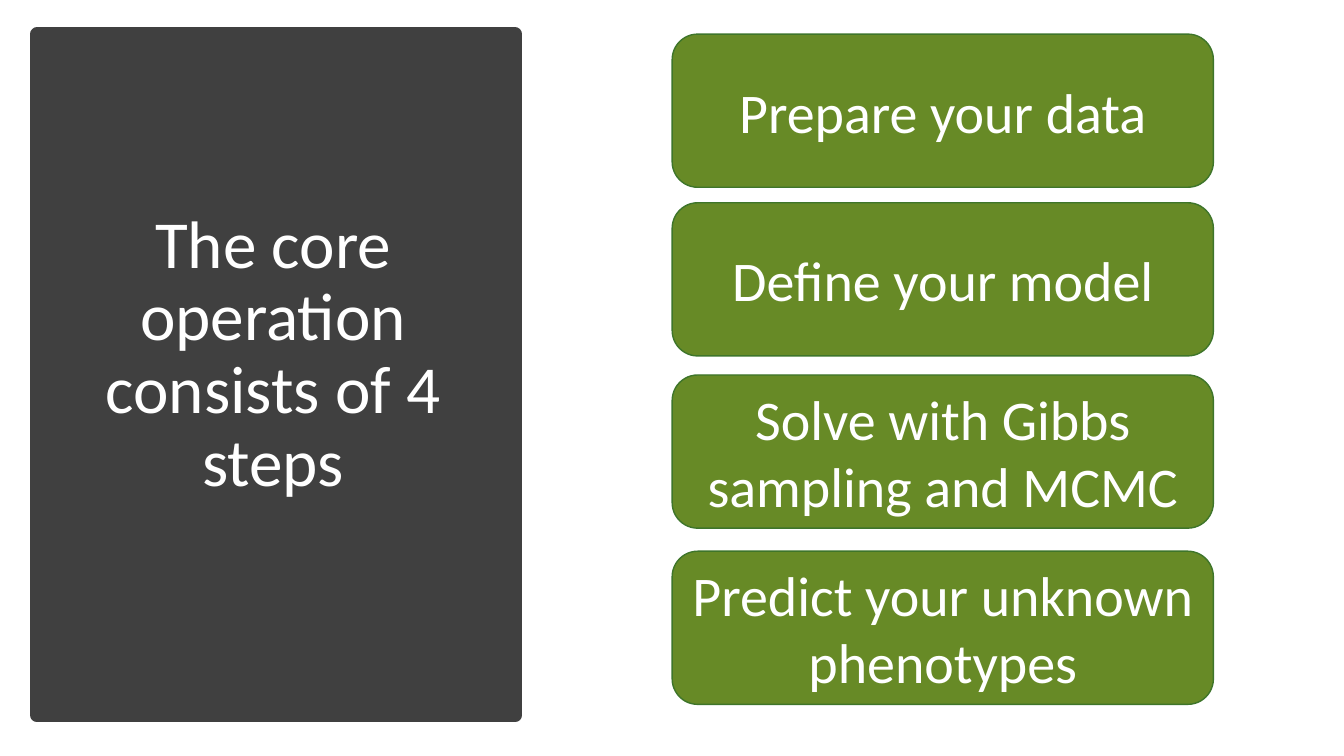
from pptx import Presentation
from pptx.dml.color import RGBColor
from pptx.enum.shapes import MSO_SHAPE
from pptx.enum.text import MSO_ANCHOR, MSO_AUTO_SIZE, PP_ALIGN
from pptx.util import Cm, Pt

WHITE = "FFFFFF"
PANEL_GREY = "404040"
STEP_GREEN = "678A26"
STEP_BORDER = "3E752A"

STEP_LEFT, STEP_WIDTH, STEP_HEIGHT = 16.94, 13.64, 3.86
STEPS = [
    (0.86, "Prepare your data"),
    (5.11, "Define your model"),
    (9.45, "Solve with Gibbs sampling and MCMC"),
    (13.89, "Predict your unknown phenotypes"),
]


def color(hex_string):
    return RGBColor.from_string(hex_string)


def write_centered(shape, text, size):
    text_frame = shape.text_frame
    text_frame.text = text
    text_frame.word_wrap = True
    text_frame.auto_size = MSO_AUTO_SIZE.NONE
    text_frame.vertical_anchor = MSO_ANCHOR.MIDDLE
    paragraph = text_frame.paragraphs[0]
    paragraph.alignment = PP_ALIGN.CENTER
    font = paragraph.runs[0].font
    font.name = "Calibri"
    font.size = Pt(size)
    font.color.rgb = color(WHITE)
    return paragraph


def add_box(slide, preset, left, top, width, height, fill, line, line_width):
    shape = slide.shapes.add_shape(
        preset, Cm(left), Cm(top), Cm(width), Cm(height)
    )
    shape.shadow.inherit = False
    shape.fill.solid()
    shape.fill.fore_color.rgb = color(fill)
    shape.line.color.rgb = color(line)
    shape.line.width = Pt(line_width)
    return shape


def add_title(slide, text, left, top, width, height):
    title = slide.shapes.title
    title.left, title.top = Cm(left), Cm(top)
    title.width, title.height = Cm(width), Cm(height)
    paragraph = write_centered(title, text, 48)
    paragraph.line_spacing = 0.9
    paragraph.space_after = Pt(6)
    title.element.getparent().append(title.element)


def add_step(slide, top, text):
    step = add_box(
        slide, MSO_SHAPE.ROUNDED_RECTANGLE, STEP_LEFT, top,
        STEP_WIDTH, STEP_HEIGHT, STEP_GREEN, STEP_BORDER, 1,
    )
    write_centered(step, text, 40)


def main():
    presentation = Presentation()
    presentation.slide_width = Cm(33.87)
    presentation.slide_height = Cm(19.05)
    slide = presentation.slides.add_slide(presentation.slide_layouts[5])

    add_box(
        slide, MSO_SHAPE.RECTANGLE, 0.94, 0.86, 12.04, 17.17,
        PANEL_GREY, PANEL_GREY, 10,
    )
    add_title(
        slide, "The core operation consists of 4 steps",
        2.06, 2.06, 9.65, 13.79,
    )
    for top, text in STEPS:
        add_step(slide, top, text)

    presentation.save("out.pptx")


if __name__ == "__main__":
    main()
